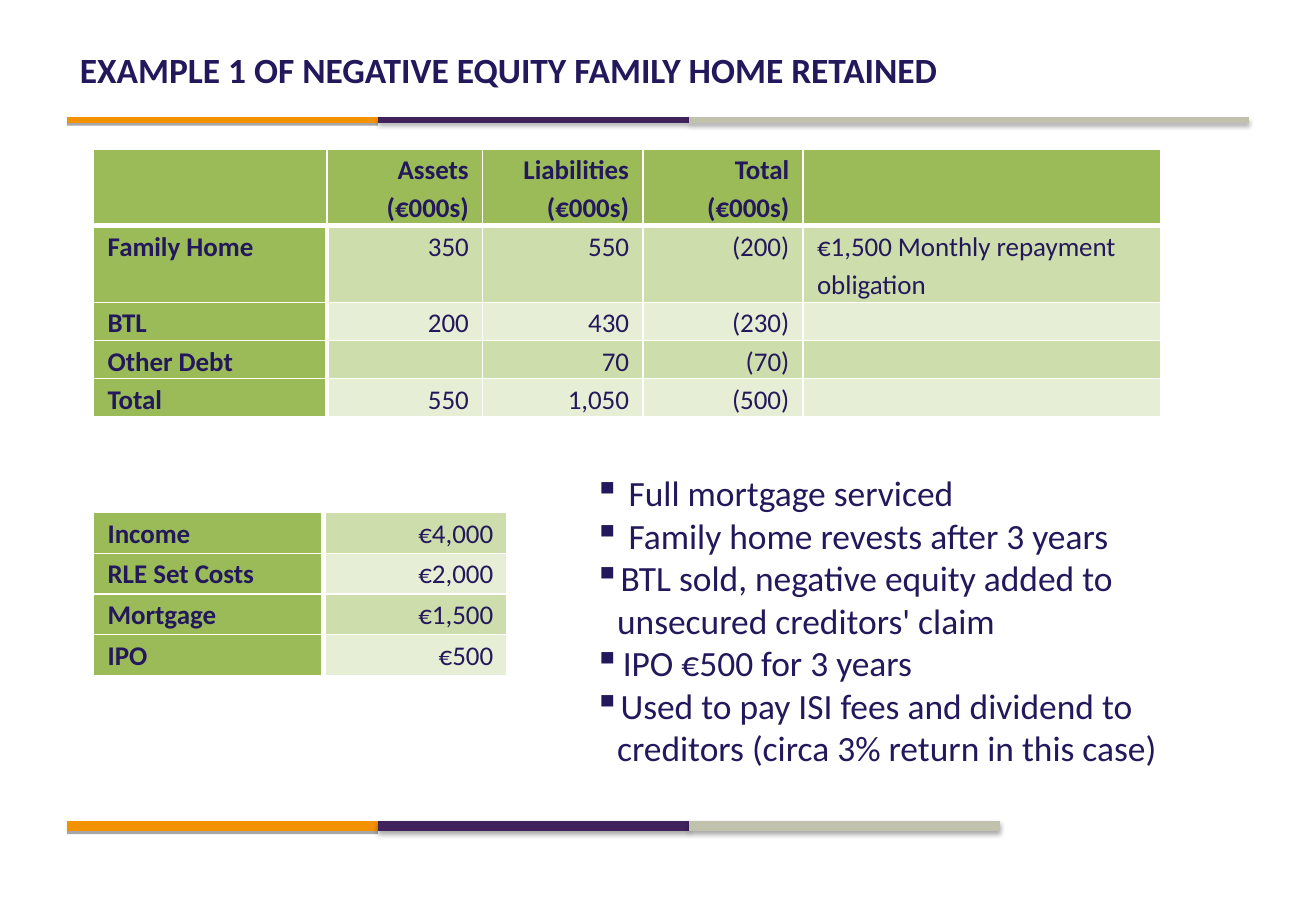
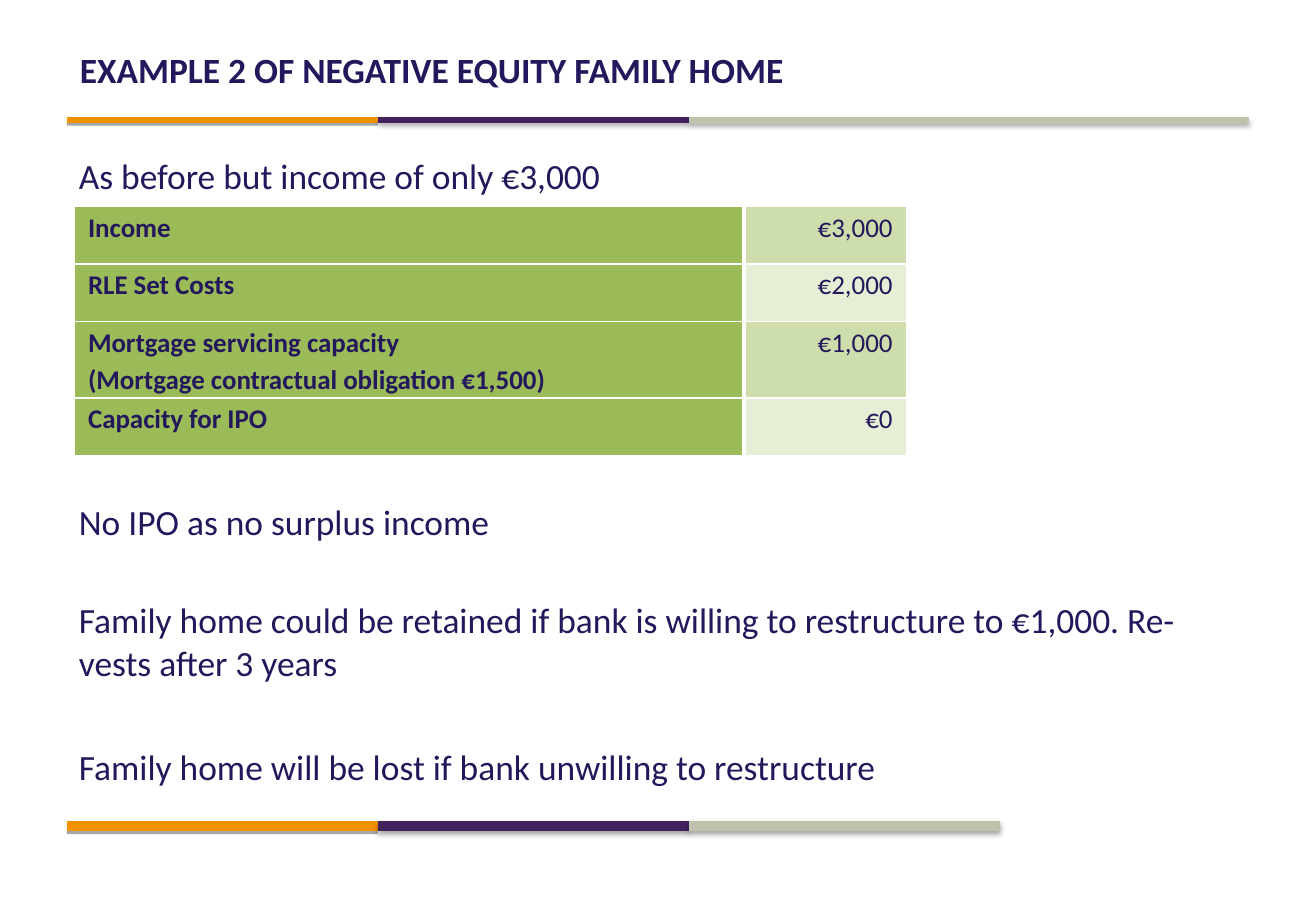
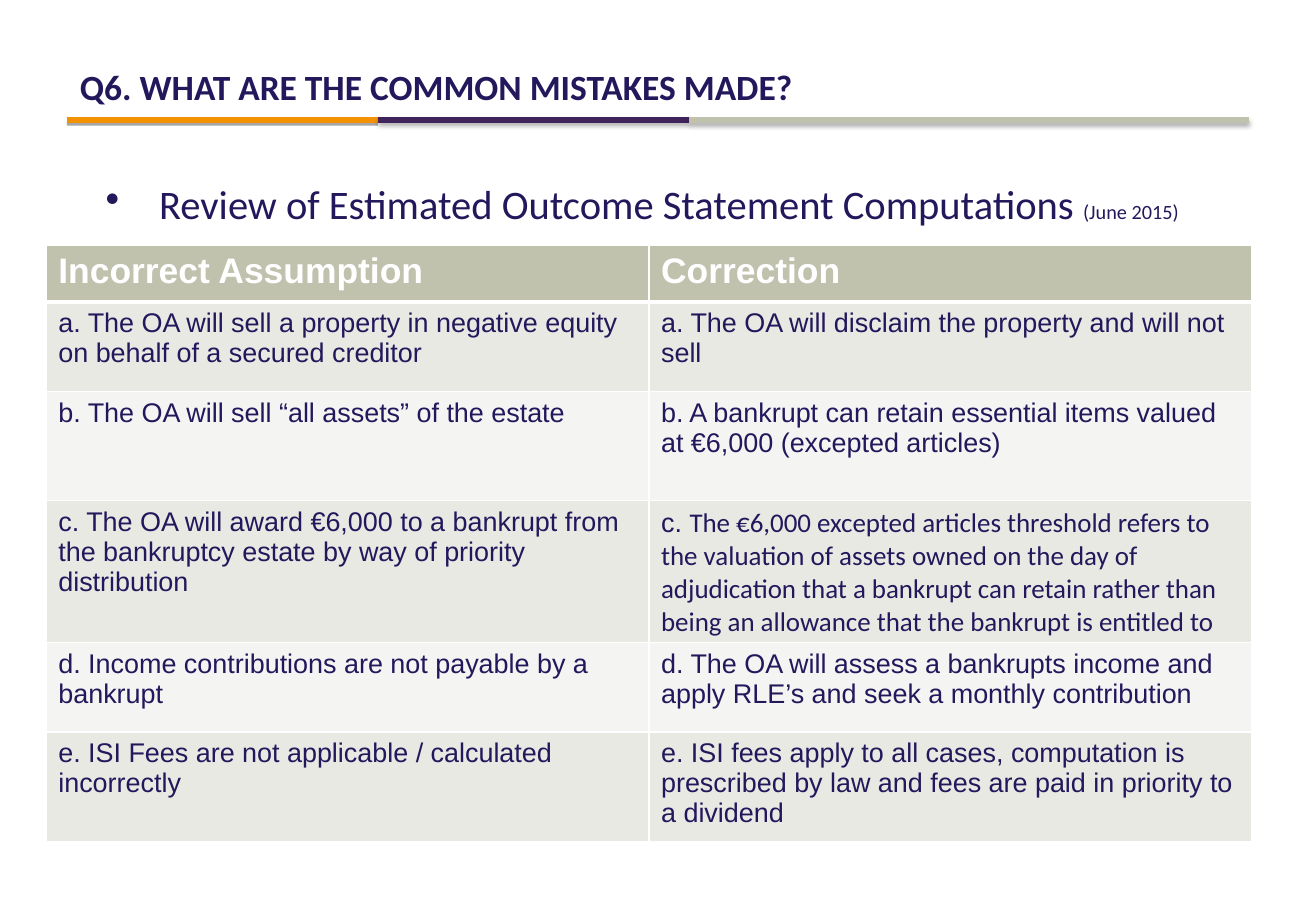
from dataclasses import dataclass
from typing import Optional, Sequence, Union

from lxml.etree import SubElement
from pptx import Presentation
from pptx.dml.color import RGBColor
from pptx.enum.shapes import MSO_CONNECTOR
from pptx.enum.text import MSO_ANCHOR, PP_ALIGN
from pptx.oxml.ns import qn
from pptx.util import Cm, Pt

COLORS = {
    "ink": "24185C", "white": "FFFFFF", "black": "000000",
    "orange": "F39200", "purple": "40225C", "stone": "C1C2AE",
    "stone_dark": "E9E9E3", "stone_light": "F4F4F2",
    "green": "9BBB59", "green_dark": "CDDDAC", "green_light": "E6EED5",
}
LEFT, RIGHT = PP_ALIGN.LEFT, PP_ALIGN.RIGHT


@dataclass(frozen=True)
class Run:
    text: str
    font: Optional[str] = None
    size: Optional[float] = None


Text = Union[str, Sequence[Run]]


@dataclass(frozen=True)
class Line:
    """One paragraph; indent is a hanging indent in cm, before is in points."""
    text: Text
    before: float = 0
    indent: float = 0
    bullet: str = ""


@dataclass(frozen=True)
class Rule:
    start: float
    end: float
    color: str
    blur: float


@dataclass(frozen=True)
class TableStyle:
    head: str
    bands: tuple[str, str]
    font: str
    head_size: float
    head_color: str
    spacing: Optional[float]
    margins: tuple[float, float]  # side, top and bottom
    side_head: bool


@dataclass(frozen=True)
class Grid:
    left: float
    top: float
    cols: Sequence[float]
    rows: Sequence[float]
    cells: Sequence[Sequence[Text]]
    aligns: Sequence[PP_ALIGN]
    style: TableStyle
    top_head: bool = False


GREEN = TableStyle("green", ("green_dark", "green_light"), "Calibri", 16, "ink",
                   1.15, (0.29, 0), True)
STONE = TableStyle("stone", ("stone_dark", "stone_light"), "Arial", 21, "white",
                   None, (0.25, 0.13), False)

RULE_COLORS = (("orange", 0), ("purple", 3.1), ("stone", 3.1))
RULE_LEFT, RULE_STEP = 1.4, 6.5


def rgb(name: str) -> RGBColor:
    return RGBColor.from_string(COLORS[name])


def write(tf, lines: Sequence[Line], *, font: str = "Calibri", size: float = 21,
          color: str = "ink", bold: bool = False, align: Optional[PP_ALIGN] = None,
          spacing: Optional[float] = None) -> None:
    for i, line in enumerate(lines):
        p = tf.paragraphs[0] if i == 0 else tf.add_paragraph()
        if align is not None:
            p.alignment = align
        if spacing:
            p.line_spacing = spacing
        if line.before:
            p.space_before = Pt(line.before)
        if line.bullet:
            pPr = p._p.get_or_add_pPr()
            pPr.set("marL", str(Cm(line.indent)))
            pPr.set("indent", str(-Cm(line.indent)))
            SubElement(pPr, qn("a:buChar"), char=line.bullet)
        runs = [Run(line.text)] if isinstance(line.text, str) else line.text
        for run in runs:
            if not run.text:
                continue
            r = p.add_run()
            r.text = run.text
            r.font.name = run.font or font
            r.font.size = Pt(run.size or size)
            r.font.bold = bold
            r.font.color.rgb = rgb(color)


def add_text(slide, left: float, top: float, width: float, height: float,
             lines: Sequence[Line], **fmt) -> None:
    sp = slide.shapes.add_textbox(Cm(left), Cm(top), Cm(width), Cm(height))
    sp.text_frame.word_wrap = True
    write(sp.text_frame, lines, **fmt)


def add_shadow(sp, blur: float) -> None:
    effects = SubElement(sp.element.spPr, qn("a:effectLst"))
    shadow = SubElement(effects, qn("a:outerShdw"), blurRad=str(Pt(blur)),
                        dist=str(Pt(1.8)), dir="5400000", rotWithShape="0")
    clr = SubElement(shadow, qn("a:srgbClr"), val=COLORS["black"])
    SubElement(clr, qn("a:alpha"), val="35000")


def add_rules(slide, layout, y: float, weight: float, right: float) -> None:
    """Draw a three-colour rule and move it to the layout, behind the title."""
    count = len(RULE_COLORS)
    ends = [RULE_LEFT + RULE_STEP * i for i in range(count)] + [right]
    for i, (color, blur) in enumerate(RULE_COLORS):
        rule = Rule(ends[i], ends[i + 1], color, blur)
        sp = slide.shapes.add_connector(MSO_CONNECTOR.STRAIGHT, Cm(rule.start), Cm(y),
                                        Cm(rule.end), Cm(y))
        sp.line.color.rgb = rgb(rule.color)
        sp.line.width = Pt(weight)
        add_shadow(sp, rule.blur)
        layout.placeholders[0].element.addprevious(sp.element)


def add_titled_slide(prs, layout, title: str, top: float = 0.76):
    slide = prs.slides.add_slide(layout)
    sp = slide.shapes.title
    sp.left, sp.top, sp.width, sp.height = Cm(1.37), Cm(top), Cm(24.77), Cm(1.37)
    tf = sp.text_frame
    tf.vertical_anchor = MSO_ANCHOR.MIDDLE
    tf.margin_left = tf.margin_right = Cm(0.3)
    tf.margin_top = tf.margin_bottom = Cm(0.15)
    write(tf, [Line(title)], bold=True, align=LEFT)
    return slide


def set_borders(cell, **widths: float) -> None:
    tcPr = cell._tc.get_or_add_tcPr()
    for side, width in widths.items():
        ln = SubElement(tcPr, qn(f"a:ln{side}"), w=str(Pt(width)))
        fill = SubElement(ln, qn("a:solidFill"))
        SubElement(fill, qn("a:srgbClr"), val=COLORS["white"])


def add_grid(slide, grid: Grid) -> None:
    style = grid.style
    table = slide.shapes.add_table(
        len(grid.rows), len(grid.cols), Cm(grid.left), Cm(grid.top),
        Cm(sum(grid.cols)), Cm(sum(grid.rows))).table
    table.first_row = table.horz_banding = False
    for column, width in zip(table.columns, grid.cols):
        column.width = Cm(width)
    for row, height in zip(table.rows, grid.rows):
        row.height = Cm(height)

    for r, texts in enumerate(grid.cells):
        in_head = grid.top_head and r == 0
        band = style.bands[(r - grid.top_head) % 2]
        for c, text in enumerate(texts):
            in_side = style.side_head and c == 0
            beside = style.side_head and not in_head
            head = in_head or in_side
            cell = table.cell(r, c)
            set_borders(cell,
                        L=3 if beside and c == 1 else 1,
                        R=3 if beside and c == 0 else 1,
                        T=3 if grid.top_head and r == 1 else 1,
                        B=3 if in_head else 1)
            cell.fill.solid()
            cell.fill.fore_color.rgb = rgb(style.head if head else band)
            side, edge = style.margins
            cell.margin_left = cell.margin_right = Cm(side)
            cell.margin_top = cell.margin_bottom = Cm(edge)
            parts = text.split("\n") if isinstance(text, str) else [text]
            write(cell.text_frame, [Line(part) for part in parts],
                  font=style.font, size=style.head_size if head else 16,
                  color=style.head_color if head else "ink", bold=head,
                  align=grid.aligns[c], spacing=style.spacing)


BALANCE = Grid(
    1.96, 3.12, (4.88, 3.25, 3.35, 3.35, 7.47), (1.6, 1.6, 0.8, 0.8, 0.8),
    (
        ("", "Assets\n(€000s)", "Liabilities\n(€000s)", "Total\n(€000s)", ""),
        ("Family Home", "350", "550", "(200)", "€1,500 Monthly repayment obligation"),
        ("BTL", "200", "430", "(230)", ""),
        ("Other Debt", "", "70", "(70)", ""),
        ("Total", "550", "1,050", "(500)", ""),
    ),
    (LEFT, RIGHT, RIGHT, RIGHT, LEFT), GREEN, top_head=True)

BUDGET_1 = Grid(
    1.96, 10.72, (4.8, 3.84), (0.85,) * 4,
    (
        ("Income", "€4,000"),
        ("RLE Set Costs", "€2,000"),
        ("Mortgage", "€1,500"),
        ("IPO", "€500"),
    ),
    (LEFT, RIGHT), GREEN)

BUDGET_2 = Grid(
    1.55, 4.32, (14, 3.4), (1.2, 1.2, 1.6, 1.2),
    (
        ("Income", "€3,000"),
        ("RLE Set Costs", "€2,000"),
        ("Mortgage servicing capacity\n(Mortgage contractual obligation €1,500)", "€1,000"),
        ("Capacity for IPO", "€0"),
    ),
    (LEFT, RIGHT), GREEN)

MISTAKES = Grid(
    0.97, 5.13, (12.6, 12.6), (1.19, 1.87, 2.28, 2.97, 1.87, 2.28),
    (
        ("Incorrect Assumption", "Correction"),
        ("a. The OA will sell a property in negative equity on behalf of a secured creditor",
         "a. The OA will disclaim the property and will not sell"),
        ("b. The OA will sell “all assets” of the estate",
         "b. A bankrupt can retain essential items valued at €6,000 (excepted articles)"),
        ("c. The OA will award €6,000 to a bankrupt from the bankruptcy estate by way of "
         "priority distribution",
         (Run("c. "),
          Run("The €6,000 excepted articles threshold refers to the valuation of assets "
              "owned on the day of adjudication that a bankrupt can retain rather than "
              "being an allowance that the bankrupt is entitled to", font="Calibri"))),
        ("d. Income contributions are not payable by a bankrupt",
         "d. The OA will assess a bankrupts income and apply RLE’s and seek a monthly "
         "contribution"),
        ("e. ISI Fees are not applicable / calculated incorrectly",
         "e. ISI fees apply to all cases, computation is prescribed by law and fees are "
         "paid in priority to a dividend"),
    ),
    (LEFT, LEFT), STONE, top_head=True)

OUTCOMES = (
    ("Full mortgage serviced", 0.72),
    ("Family home revests after 3 years", 0.72),
    ("BTL sold, negative equity added to unsecured creditors' claim", 0.48),
    ("IPO €500 for 3 years", 0.6),
    ("Used to pay ISI fees and dividend to creditors (circa 3% return in this case)", 0.48),
)


def main() -> None:
    prs = Presentation()
    prs.slide_width, prs.slide_height = Cm(27.51), Cm(19.05)
    layout = prs.slide_layouts.get_by_name("Title Only")
    for ph in list(layout.placeholders)[1:]:
        ph.element.getparent().remove(ph.element)

    slide = add_titled_slide(prs, layout, "EXAMPLE 1 OF NEGATIVE EQUITY FAMILY HOME RETAINED")
    add_rules(slide, layout, 2.51, 3, 26.11)
    add_rules(slide, layout, 17.27, 6, RULE_LEFT + 3 * RULE_STEP)
    add_grid(slide, BALANCE)
    add_grid(slide, BUDGET_1)
    add_text(slide, 12.17, 9.73, 13.21, 7.44,
             [Line(text, indent=indent, bullet="▪") for text, indent in OUTCOMES])

    slide = add_titled_slide(prs, layout, "EXAMPLE 2 OF NEGATIVE EQUITY FAMILY HOME")
    add_text(slide, 1.4, 3.1, 24.77, 13.8, [
        Line("As before but income of only €3,000"),
        Line("No IPO as no surplus income", before=180),
        Line("Family home could be retained if bank is willing to restructure to €1,000. "
             "Re-vests after 3 years", before=33),
        Line("Family home will be lost if bank unwilling to restructure", before=36.5),
    ])
    add_grid(slide, BUDGET_2)

    slide = add_titled_slide(prs, layout, "Q6. WHAT ARE THE COMMON MISTAKES MADE?", top=1.12)
    add_text(slide, 1.96, 3.12, 24.41, 2, [
        Line((Run("Review of Estimated Outcome Statement Computations "),
              Run("(June 2015)", size=12)), indent=1.12, bullet="•"),
    ], size=24, spacing=1.5)
    add_grid(slide, MISTAKES)

    prs.save("out.pptx")


if __name__ == "__main__":
    main()
